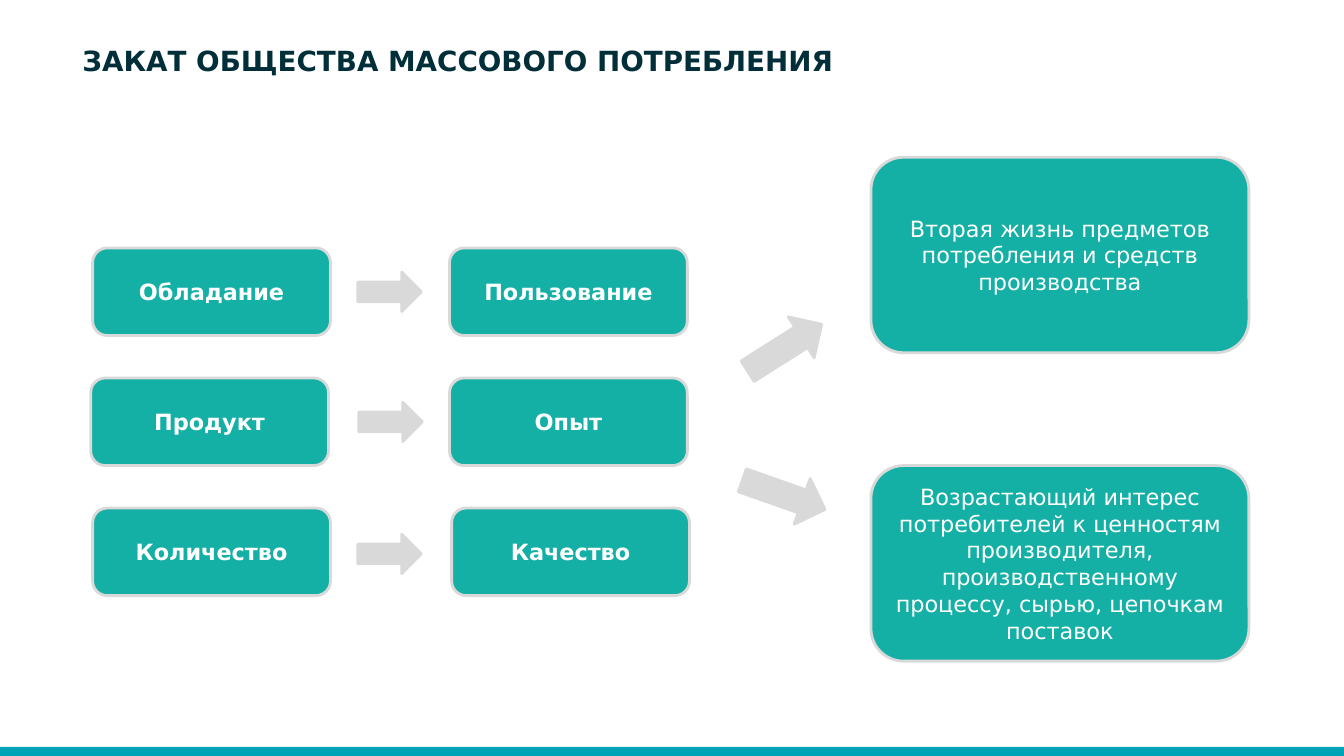
from dataclasses import dataclass

from pptx import Presentation
from pptx import util as u
from pptx.dml.color import RGBColor
from pptx.enum import shapes, text

COLORS = {
    "title": "002F39",
    "footer": "00A3B5",
    "card": "15B0A5",
    "gray": "D9D9D9",
    "white": "FFFFFF",
}
FONT = "DejaVu Sans"
SHAPE = shapes.MSO_SHAPE
SLIDE_WIDTH, SLIDE_HEIGHT = 960, 540
FOOTER_HEIGHT = 6.5
ROW_TOP, ROW_STEP = 177.1, 92.9


@dataclass
class Card:
    label: str
    left: float
    top: float
    width: float = 169.9
    height: float = 62.6
    bold: bool = True
    space_after: float = 12


@dataclass
class Arrow:
    left: float
    top: float
    width: float = 45.4
    height: float = 28.1
    rotation: float = 0


@dataclass
class Shift:
    """One row: the old value, the new value and the arrow between them."""
    old: str
    new: str
    old_left: float
    new_left: float
    arrow_left: float
    arrow_top: float


SHIFTS = [
    Shift("Обладание", "Пользование", 66.2, 321.1, 255.6, 194.4),
    Shift("Продукт", "Опыт", 64.8, 321.1, 256.3, 287.3),
    Shift("Количество", "Качество", 66.2, 322.6, 255.6, 381.6),
]
OUTCOMES = [
    Card("Вторая жизнь предметов потребления и средств производства",
         622.1, 112.3, 270, 139.7, bold=False),
    Card("Возрастающий интерес потребителей к ценностям производителя, "
         "производственному процессу, сырью, цепочкам поставок",
         622.1, 332.6, 270, 139.7, bold=False, space_after=18),
]
OUTCOME_ARROWS = [
    Arrow(529.2, 231.1, 62.6, 34.6, rotation=327.7),
    Arrow(528.5, 336.2, 62.6, 34.6, rotation=19.4),
]


def rgb(name: str) -> RGBColor:
    return RGBColor.from_string(COLORS[name])


def add_filled(slide, kind, left: float, top: float, width: float,
               height: float, fill: str, outlined: bool = True):
    shape = slide.shapes.add_shape(
        kind, u.Pt(left), u.Pt(top), u.Pt(width), u.Pt(height))
    shape.shadow.inherit = False
    shape.fill.solid()
    shape.fill.fore_color.rgb = rgb(fill)
    if outlined:
        shape.line.color.rgb = rgb("gray")
        shape.line.width = u.Pt(2)
    else:
        shape.line.fill.background()
    return shape


def style_text(paragraph, size: float, color: str, bold: bool) -> None:
    for run in paragraph.runs:
        run.font.name = FONT
        run.font.size = u.Pt(size)
        run.font.bold = bold
        run.font.color.rgb = rgb(color)


def add_card(slide, card: Card) -> None:
    shape = add_filled(slide, SHAPE.ROUNDED_RECTANGLE, card.left, card.top,
                       card.width, card.height, "card")
    frame = shape.text_frame
    frame.word_wrap = True
    frame.vertical_anchor = text.MSO_ANCHOR.MIDDLE
    frame.text = card.label
    paragraph = frame.paragraphs[0]
    paragraph.alignment = text.PP_ALIGN.CENTER
    paragraph.space_after = u.Pt(card.space_after)
    style_text(paragraph, 16, "white", card.bold)


def add_arrow(slide, arrow: Arrow) -> None:
    shape = add_filled(slide, SHAPE.RIGHT_ARROW, arrow.left, arrow.top,
                       arrow.width, arrow.height, "gray")
    shape.rotation = arrow.rotation


def add_title(slide, title: str) -> None:
    box = slide.shapes.add_textbox(
        u.Pt(51.8), u.Pt(27.4), u.Pt(706.3), u.Pt(23.8))
    box.text_frame.word_wrap = True
    box.text_frame.text = title
    style_text(box.text_frame.paragraphs[0], 19.8, "title", True)


def main() -> None:
    deck = Presentation()
    deck.slide_width, deck.slide_height = u.Pt(SLIDE_WIDTH), u.Pt(SLIDE_HEIGHT)
    slide = deck.slides.add_slide(deck.slide_layouts[6])

    add_title(slide, "ЗАКАТ ОБЩЕСТВА МАССОВОГО ПОТРЕБЛЕНИЯ")
    add_filled(slide, SHAPE.RECTANGLE, 0, SLIDE_HEIGHT - FOOTER_HEIGHT,
               SLIDE_WIDTH, FOOTER_HEIGHT, "footer", outlined=False)
    for outcome in OUTCOMES:
        add_card(slide, outcome)
    for row, shift in enumerate(SHIFTS):
        top = ROW_TOP + row * ROW_STEP
        add_card(slide, Card(shift.old, shift.old_left, top))
        add_card(slide, Card(shift.new, shift.new_left, top))
        add_arrow(slide, Arrow(shift.arrow_left, shift.arrow_top))
    for arrow in OUTCOME_ARROWS:
        add_arrow(slide, arrow)

    deck.save("out.pptx")


if __name__ == "__main__":
    main()
